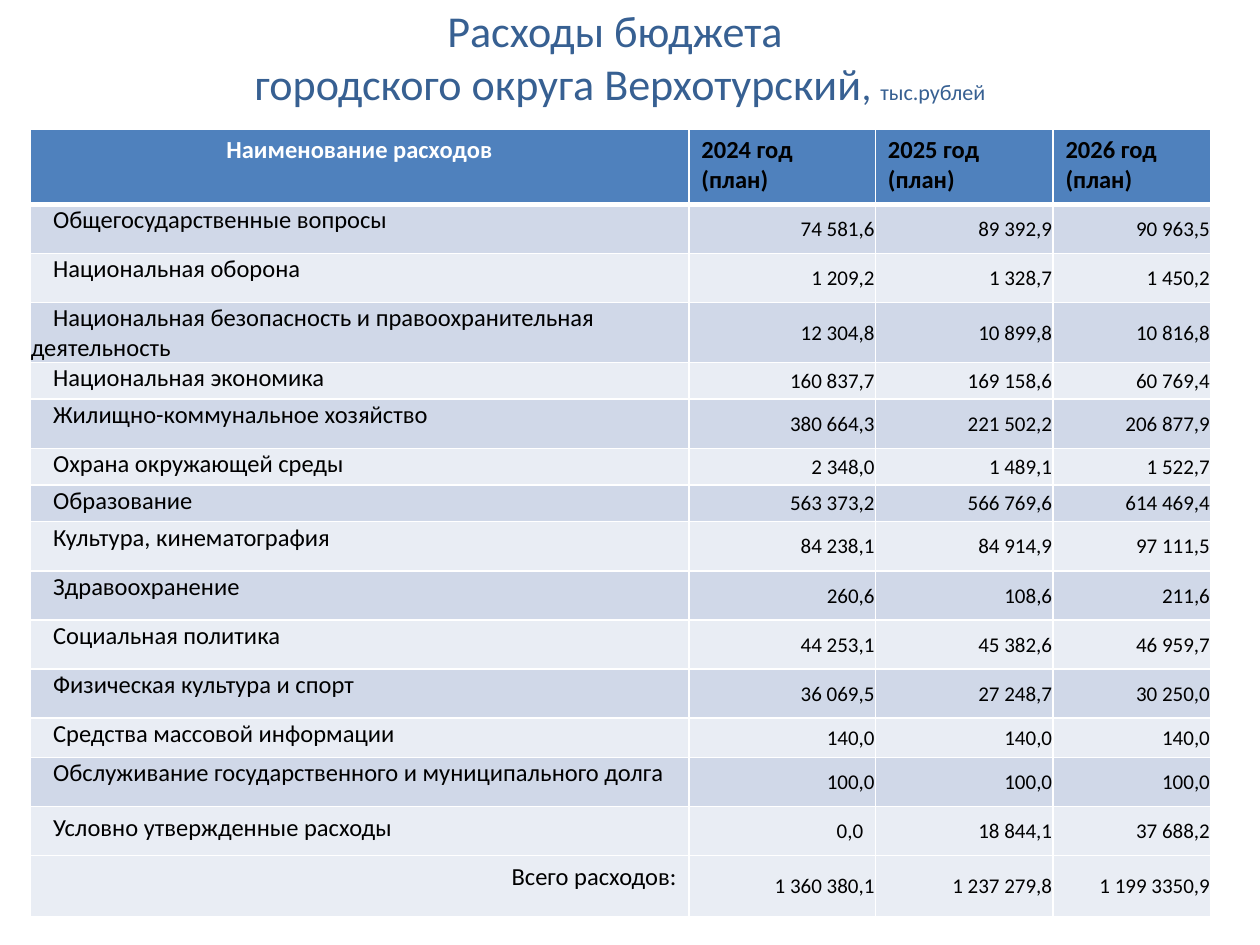
from dataclasses import dataclass

from lxml import etree
from pptx import Presentation
from pptx.dml.color import RGBColor
from pptx.enum.text import MSO_ANCHOR, PP_ALIGN
from pptx.oxml.ns import qn
from pptx.slide import Slide
from pptx.util import Cm, Pt

LEFT, CENTER, RIGHT = PP_ALIGN.LEFT, PP_ALIGN.CENTER, PP_ALIGN.RIGHT
TOP, MIDDLE = MSO_ANCHOR.TOP, MSO_ANCHOR.MIDDLE

COLORS = {
    "title": "376092",
    "header": "4F81BD",
    "dark_band": "D0D8E8",
    "light_band": "E9EDF4",
    "white": "FFFFFF",
    "black": "000000",
}

COLUMN_WIDTHS = [13.29, 3.76, 3.58, 3.18]
HEADER_HEIGHT, TALL, MEDIUM, SHORT, TOTAL_HEIGHT = 1.52, 0.99, 0.79, 0.74, 1.24
NARROW_MARGINS = (0.02, 0.02, 0.02, 0)
WIDE_MARGINS = (0.25, 0.13, 0.25, 0.13)

HEADERS = ["Наименование расходов", "2024 год (план)", "2025 год (план)", "2026 год (план)"]
EXPENSES = [
    (TALL, "Общегосударственные вопросы", "74 581,6", "89 392,9", "90 963,5"),
    (TALL, "Национальная оборона", "1 209,2", "1 328,7", "1 450,2"),
    (TALL, "Национальная безопасность и правоохранительная деятельность",
     "12 304,8", "10 899,8", "10 816,8"),
    (SHORT, "Национальная экономика", "160 837,7", "169 158,6", "60 769,4"),
    (TALL, "Жилищно-коммунальное хозяйство", "380 664,3", "221 502,2", "206 877,9"),
    (SHORT, "Охрана окружающей среды", "2 348,0", "1 489,1", "1 522,7"),
    (SHORT, "Образование", "563 373,2", "566 769,6", "614 469,4"),
    (TALL, "Культура, кинематография", "84 238,1", "84 914,9", "97 111,5"),
    (TALL, "Здравоохранение", "260,6", "108,6", "211,6"),
    (TALL, "Социальная политика", "44 253,1", "45 382,6", "46 959,7"),
    (TALL, "Физическая культура и спорт", "36 069,5", "27 248,7", "30 250,0"),
    (MEDIUM, "Средства массовой информации", "140,0", "140,0", "140,0"),
    (TALL, "Обслуживание государственного и муниципального долга",
     "100,0", "100,0", "100,0"),
    (TALL, "Условно утвержденные расходы", "0,0", "18 844,1", "37 688,2"),
    (TOTAL_HEIGHT, "Всего расходов:", "1 360 380,1", "1 237 279,8", "1 199 3350,9"),
]


@dataclass
class SlideBuilder:
    slide: Slide
    font: str = "Calibri"
    label_size: float = 14
    value_size: float = 12

    def format_run(self, run, size, color, bold=False):
        run.font.name = self.font
        run.font.size = Pt(size)
        run.font.bold = bold
        run.font.color.rgb = RGBColor.from_string(COLORS[color])

    def title(self, left, top, width, height, parts):
        """Write one centred paragraph from (text, size) parts."""
        shape = self.slide.shapes.add_textbox(Cm(left), Cm(top), Cm(width), Cm(height))
        frame = shape.text_frame
        frame.word_wrap = True
        frame.vertical_anchor = MIDDLE
        paragraph = frame.paragraphs[0]
        paragraph.alignment = CENTER
        for text, size in parts:
            start = len(paragraph.runs)
            if start:
                paragraph.add_run().text = text
            else:
                paragraph.text = text
            for run in paragraph.runs[start:]:
                self.format_run(run, size, "title")

    def table(self, left, top, widths, heights):
        shape = self.slide.shapes.add_table(
            len(heights), len(widths), Cm(left), Cm(top), Cm(sum(widths)), Cm(sum(heights)))
        for column, width in zip(shape.table.columns, widths):
            column.width = Cm(width)
        for row, height in zip(shape.table.rows, heights):
            row.height = Cm(height)
        return shape.table

    def borders(self, cell, top=1, bottom=1):
        """Add white cell borders; they must precede the fill in the cell's XML."""
        properties = cell._tc.get_or_add_tcPr()
        sides = {"lnL": 1, "lnR": 1, "lnT": top, "lnB": bottom}
        for position, (side, width) in enumerate(sides.items()):
            line = etree.Element(qn(f"a:{side}"), w=str(Pt(width)))
            fill = etree.SubElement(line, qn("a:solidFill"))
            etree.SubElement(fill, qn("a:srgbClr"), val=COLORS["white"])
            properties.insert(position, line)

    def cell(self, cell, text, fill, size, color="black", bold=False,
             alignment=LEFT, anchor=TOP, margins=WIDE_MARGINS, indent=0):
        cell.fill.solid()
        cell.fill.fore_color.rgb = RGBColor.from_string(COLORS[fill])
        cell.margin_left, cell.margin_top, cell.margin_right, cell.margin_bottom = map(Cm, margins)
        cell.vertical_anchor = anchor
        paragraph = cell.text_frame.paragraphs[0]
        paragraph.text = text
        paragraph.alignment = alignment
        if indent:
            paragraph._p.get_or_add_pPr().set("indent", str(Cm(indent)))
        self.format_run(paragraph.runs[0], size, color, bold)

    def header_row(self, table, headers):
        for column, text in enumerate(headers):
            cell = table.cell(0, column)
            self.cell(cell, text, "header", self.label_size, bold=True,
                      color="black" if column else "white",
                      alignment=LEFT if column else CENTER)
            self.borders(cell, bottom=3)

    def expense_row(self, table, row, label, values):
        total = row == len(table.rows) - 1
        before_total = row == len(table.rows) - 2
        fill = "dark_band" if row % 2 and not total else "light_band"
        wide_label = total or before_total
        indent = 0 if total else 0.22 if before_total else 0.45
        self.cell(table.cell(row, 0), label, fill, self.label_size,
                  alignment=RIGHT if total else LEFT, indent=indent,
                  margins=WIDE_MARGINS if wide_label else NARROW_MARGINS)
        for column, value in enumerate(values, start=1):
            wide_value = before_total and column == 1
            self.cell(table.cell(row, column), value, fill, self.value_size,
                      alignment=RIGHT, anchor=MIDDLE,
                      margins=WIDE_MARGINS if wide_value else NARROW_MARGINS)
        for cell in table.rows[row].cells:
            self.borders(cell, top=3 if row == 1 else 1)


def main():
    presentation = Presentation()
    presentation.slide_width, presentation.slide_height = Cm(25.4), Cm(19.05)
    builder = SlideBuilder(presentation.slides.add_slide(presentation.slide_layouts[6]))

    builder.title(0.4, 0, 24.2, 2.28, [
        ("Расходы бюджета \vгородского округа Верхотурский", 25.2),
        (", ", 22.5),
        ("тыс.рублей", 12.6),
    ])
    heights = [HEADER_HEIGHT] + [expense[0] for expense in EXPENSES]
    table = builder.table(0.6, 2.6, COLUMN_WIDTHS, heights)
    builder.header_row(table, HEADERS)
    for row, (_, label, *values) in enumerate(EXPENSES, start=1):
        builder.expense_row(table, row, label, values)

    presentation.save("out.pptx")


if __name__ == "__main__":
    main()
